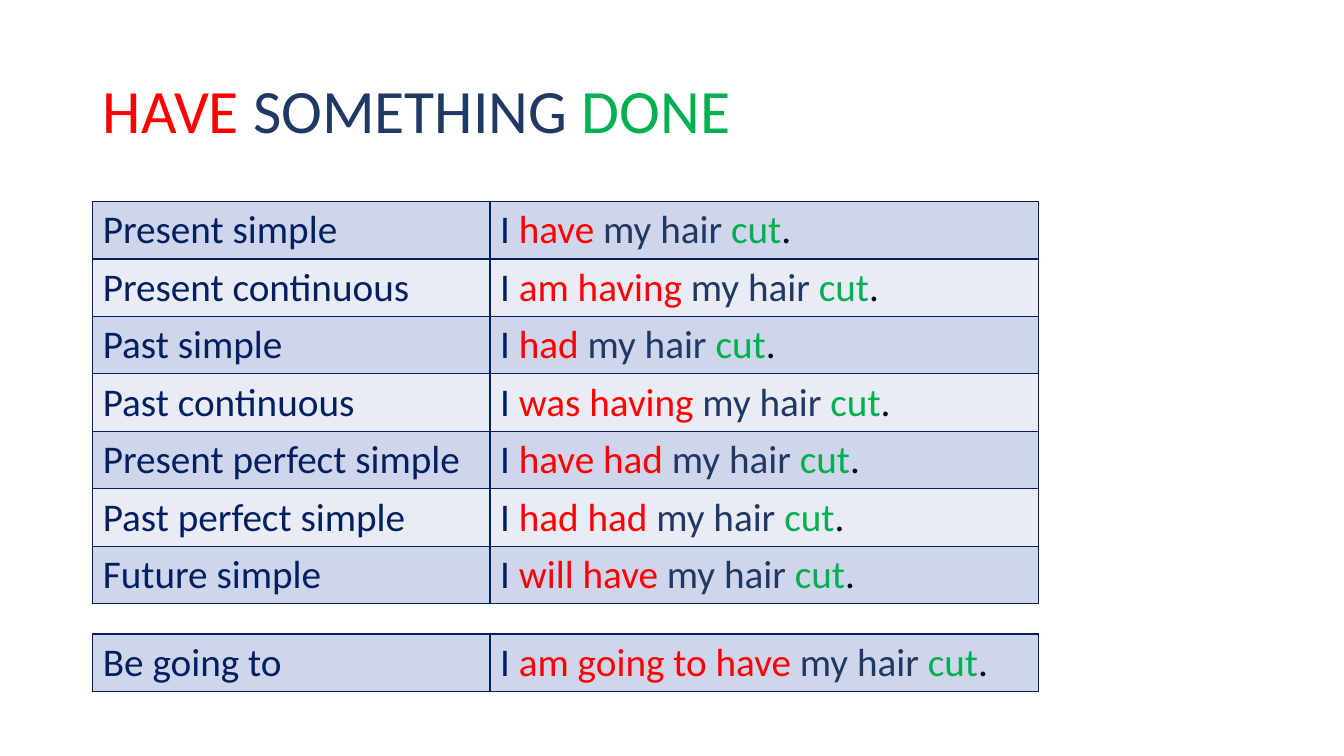
from lxml import etree
from pptx import Presentation, util as u
from pptx.dml.color import RGBColor
from pptx.enum import text
from pptx.oxml import ns

COLORS = {"have": "FF0000", "object": "203864", "done": "00B050", "navy": "002060",
          "stop": "000000", "band0": "CFD5EA", "band1": "E9EBF5"}
TITLE = [("HAVE", "have"), (" SOMETHING ", "object"), ("DONE", "done")]
TENSES = [
    ("Present simple", "have"),
    ("Present continuous", "am having"),
    ("Past simple", "had"),
    ("Past continuous", "was having"),
    ("Present perfect simple", "have had"),
    ("Past perfect simple", "had had"),
    ("Future simple", "will have"),
]
GOING_TO = [("Be going to", "am going to have")]

SLIDE_W, SLIDE_H = 13.33, 7.5
LEFT = 0.92
COLUMNS = (3.94, 5.44)
ROW_H = 0.57
TITLE_FORMAT = {"name": "Calibri", "size": u.Pt(44)}
CELL_FORMAT = {"name": "Calibri", "size": u.Pt(28)}


def rgb(key):
    return RGBColor.from_string(COLORS[key])


def write(paragraph, pieces, font_format):
    for words, color in pieces:
        run = paragraph.add_run()
        run.text = words
        for key, value in font_format.items():
            setattr(run.font, key, value)
        run.font.color.rgb = rgb(color)


def add_borders(cell):
    properties = cell._tc.get_or_add_tcPr()
    for side in ("lnL", "lnR", "lnT", "lnB"):
        line = etree.SubElement(properties, ns.qn(f"a:{side}"), w=str(u.Pt(1)))
        fill = etree.SubElement(line, ns.qn("a:solidFill"))
        etree.SubElement(fill, ns.qn("a:srgbClr"), val=COLORS["navy"])


def add_tenses(slide, top, tenses):
    frame = slide.shapes.add_table(len(tenses), len(COLUMNS), u.Inches(LEFT), u.Inches(top),
                                   u.Inches(sum(COLUMNS)), u.Inches(ROW_H * len(tenses)))
    table = frame.table
    for column, width in zip(table.columns, COLUMNS):
        column.width = u.Inches(width)
    for row, (tense, verb) in enumerate(tenses):
        example = [("I ", "navy"), (verb + " ", "have"), ("my hair ", "object"),
                   ("cut", "done"), (".", "stop")]
        for col, pieces in enumerate(([(tense, "navy")], example)):
            cell = table.cell(row, col)
            add_borders(cell)
            cell.fill.solid()
            cell.fill.fore_color.rgb = rgb(f"band{row % 2}")
            write(cell.text_frame.paragraphs[0], pieces, CELL_FORMAT)


def main():
    deck = Presentation()
    deck.slide_width, deck.slide_height = u.Inches(SLIDE_W), u.Inches(SLIDE_H)
    slide = deck.slides.add_slide(deck.slide_layouts[6])

    title = slide.shapes.add_textbox(*map(u.Inches, (LEFT, 0.4, 11.5, 1.45))).text_frame
    title.word_wrap = True
    title.vertical_anchor = text.MSO_ANCHOR.MIDDLE
    title.paragraphs[0].line_spacing = 0.9
    write(title.paragraphs[0], TITLE, TITLE_FORMAT)

    add_tenses(slide, 2, TENSES)
    add_tenses(slide, 6.29, GOING_TO)
    deck.save("out.pptx")


if __name__ == "__main__":
    main()
